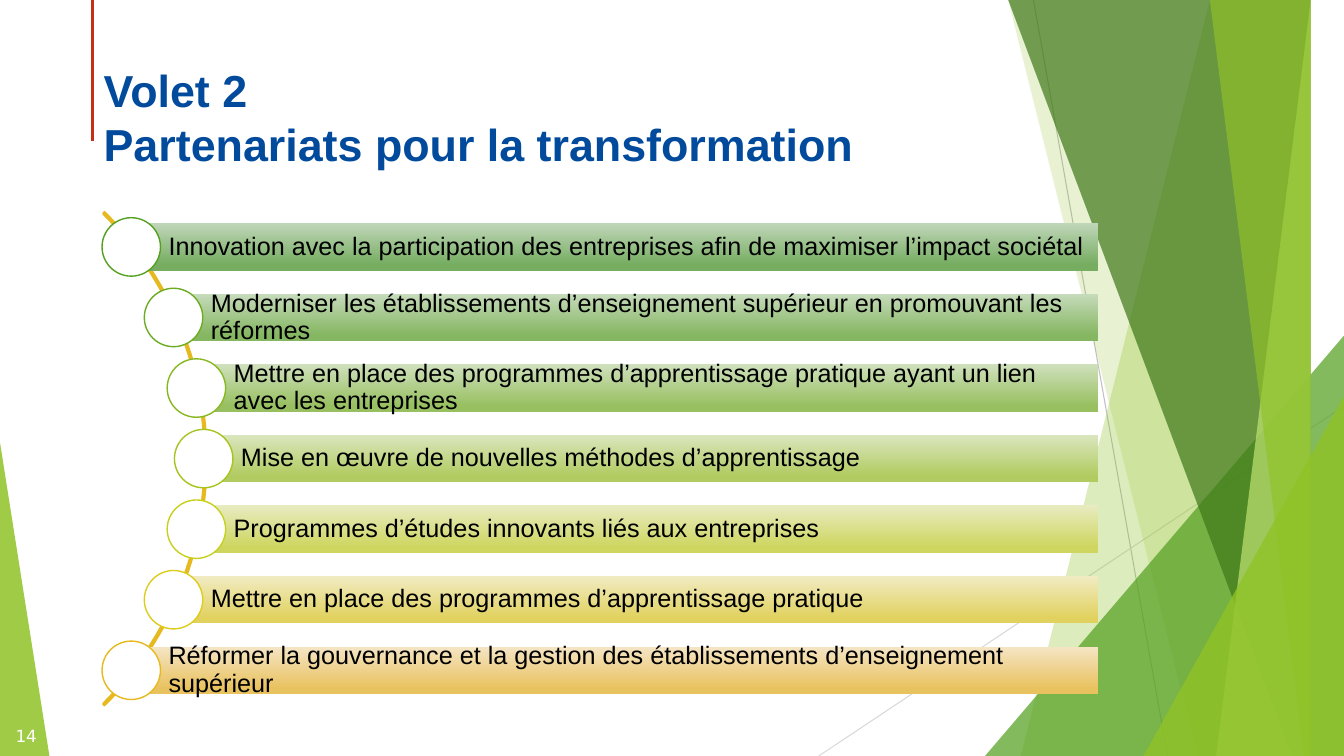
import math

from lxml import etree
from pptx import Presentation
from pptx import util as u
from pptx.dml.color import RGBColor
from pptx.enum import shapes, text
from pptx.oxml.ns import qn

WIDTH, HEIGHT = 13.33, 7.5
THEME = {
    "lime": "90C226", "green": "54A021", "forest": "3F7819", "pale": "C0E474",
    "red": "C42F1A", "gold": "E6B91E", "white": "FFFFFF",
    "grey": "BFBFBF", "light grey": "D9D9D9",
    "title": {"name": "Arial", "size": u.Pt(32), "bold": True, "color": "024B9C"},
    "step": {"name": "Arial", "size": u.Pt(18), "color": "000000"},
    "number": {"name": "DejaVu Sans", "size": u.Pt(12), "color": "FFFFFF"},
}


def paint(shape, fill=None, opacity=100, line=None, weight=1):
    """Give a shape a flat fill (or none) with an opacity in percent, and an outline (or none)."""
    shape.shadow.inherit = False
    if fill:
        shape.fill.solid()
        shape.fill.fore_color.rgb = RGBColor.from_string(fill)
        if opacity < 100:
            colour = shape.fill._xPr.find(qn("a:solidFill"))[0]
            etree.SubElement(colour, qn("a:alpha")).set("val", str(opacity * 1000))
    else:
        shape.fill.background()
    if line:
        shape.line.color.rgb = RGBColor.from_string(line)
        shape.line.width = u.Pt(weight)
    else:
        shape.line.fill.background()


def write(shape, lines, style, frame_format, paragraph_format):
    """Put one paragraph per line into a shape's text frame."""
    frame = shape.text_frame
    frame.word_wrap = True
    for name, value in frame_format.items():
        setattr(frame, name, value)
    for index, line in enumerate(lines):
        paragraph = frame.add_paragraph() if index else frame.paragraphs[0]
        for name, value in paragraph_format.items():
            setattr(paragraph, name, value)
        run = paragraph.add_run()
        run.text = line
        for name, value in style.items():
            if name == "color":
                run.font.color.rgb = RGBColor.from_string(value)
            else:
                setattr(run.font, name, value)


presentation = Presentation()
presentation.slide_width, presentation.slide_height = u.Inches(WIDTH), u.Inches(HEIGHT)
slide = presentation.slides.add_slide(presentation.slide_layouts[6])
canvas = slide.shapes

# Thin rules: two grey diagonals and the red mark beside the title
for start_x, start_y, end_x, end_y, colour, weight in [
    (10.25, 0, 11.58, HEIGHT, "grey", 0.75),
    (WIDTH, 4.03, 8.12, HEIGHT, "light grey", 0.75),
    (0.92, 0, 0.92, 1.4, "red", 2.25),
]:
    rule = canvas.add_connector(
        shapes.MSO_CONNECTOR.STRAIGHT, *map(u.Inches, (start_x, start_y, end_x, end_y)))
    rule.line.color.rgb = RGBColor.from_string(THEME[colour])
    rule.line.width = u.Pt(weight)
    etree.SubElement(rule._element.spPr, qn("a:effectLst"))

# Facets: panels run from a top x to a bottom x, triangles fill a bottom corner
for kind, first, second, colour, opacity in [
    ("panel", 12.28, 10.04, "lime", 30),
    ("panel", 10.5, 11.83, "lime", 20),
    ("right corner", 3.56, 4.17, "green", 72),
    ("panel", 10.21, 12.91, "forest", 70),
    ("panel", 13.03, 11.92, "pale", 70),
    ("panel", 11.96, 13.18, "lime", 65),
    ("right corner", 1.99, 3.57, "lime", 80),
    ("left corner", 0.49, 3.11, "lime", 85),
]:
    if kind == "panel":
        outline = canvas.build_freeform(first, -0.01, scale=u.Inches(1))
        outline.add_line_segments([(WIDTH, -0.01), (WIDTH, HEIGHT), (second, HEIGHT)], close=True)
        facet = outline.convert_to_shape()
    else:
        on_right = kind == "right corner"
        left = WIDTH - first if on_right else 0
        facet = canvas.add_shape(
            shapes.MSO_SHAPE.ISOSCELES_TRIANGLE,
            *map(u.Inches, (left, HEIGHT - second, first, second)))
        facet.adjustments[0] = 1 if on_right else 0
    paint(facet, THEME[colour], opacity)

# Arc that carries the steps
HUB_X, HUB_Y, ARC_RADIUS = -1.41, 4.55, 3.46
arc = canvas.add_shape(
    shapes.MSO_SHAPE.BLOCK_ARC,
    *map(u.Inches, (HUB_X - ARC_RADIUS, HUB_Y - ARC_RADIUS, 2 * ARC_RADIUS, 2 * ARC_RADIUS)))
for index, value in enumerate((189, 27, 0.003)):
    arc.adjustments[index] = value
paint(arc, line=THEME["gold"], weight=1.5)

# Steps: text, bar top colour, bar bottom colour, circle outline
steps = [
    ("Innovation avec la participation des entreprises afin de maximiser l’impact sociétal",
     "C0D6B9", "76AD61", "54A021"),
    ("Moderniser les établissements d’enseignement supérieur en promouvant les réformes",
     "C6DBBB", "85B661", "6BAC20"),
    ("Mettre en place des programmes d’apprentissage pratique ayant un lien avec les entreprises",
     "CFE0BC", "98C061", "86B820"),
    ("Mise en œuvre de nouvelles méthodes d’apprentissage",
     "DAE6BE", "B1CB60", "A5C41F"),
    ("Programmes d’études innovants liés aux entreprises",
     "E8EBC0", "CED660", "C7D01D"),
    ("Mettre en place des programmes d’apprentissage pratique",
     "F1EBC3", "E1D260", "DDCC1C"),
    ("Réformer la gouvernance et la gestion des établissements d’enseignement supérieur",
     "F5E5C5", "E9C260", "E6B91E"),
]
PITCH, BAR_HEIGHT, BAR_RIGHT, CIRCLE, CENTRE_RADIUS = 0.7, 0.47, 10.89, 0.58, 3.43
for index, (label, top_colour, bottom_colour, outline_colour) in enumerate(steps):
    drop = (index - (len(steps) - 1) / 2) * PITCH
    centre_x = HUB_X + math.sqrt(CENTRE_RADIUS ** 2 - drop ** 2)
    centre_y = HUB_Y + drop
    bar = canvas.add_shape(
        shapes.MSO_SHAPE.RECTANGLE,
        *map(u.Inches, (centre_x, centre_y - BAR_HEIGHT / 2, BAR_RIGHT - centre_x, BAR_HEIGHT)))
    paint(bar)
    bar.fill.gradient()
    bar.fill.gradient_angle = 270
    for stop, position, colour in zip(
            bar.fill.gradient_stops, (0, 0.88), (top_colour, bottom_colour)):
        stop.position = position
        stop.color.rgb = RGBColor.from_string(colour)
    write(bar, [label], THEME["step"],
          {"vertical_anchor": text.MSO_ANCHOR.MIDDLE, "margin_left": u.Inches(0.37),
           "margin_right": u.Inches(0.05)},
          {"alignment": text.PP_ALIGN.LEFT, "line_spacing": 0.9})
    circle = canvas.add_shape(
        shapes.MSO_SHAPE.OVAL,
        *map(u.Inches, (centre_x - CIRCLE / 2, centre_y - CIRCLE / 2, CIRCLE, CIRCLE)))
    paint(circle, THEME["white"], line=outline_colour)

title = canvas.add_textbox(*map(u.Inches, (0.93, 0.54, 9.54, 0.84)))
write(title, ["Volet 2", "Partenariats pour la transformation"], THEME["title"],
      {"vertical_anchor": text.MSO_ANCHOR.TOP, "margin_top": u.Inches(0.08)},
      {"alignment": text.PP_ALIGN.LEFT})

number = canvas.add_textbox(*map(u.Inches, (0, HEIGHT - 0.4, 0.52, 0.4)))
write(number, ["14"], THEME["number"],
      {"vertical_anchor": text.MSO_ANCHOR.MIDDLE}, {"alignment": text.PP_ALIGN.CENTER})

presentation.save("out.pptx")
